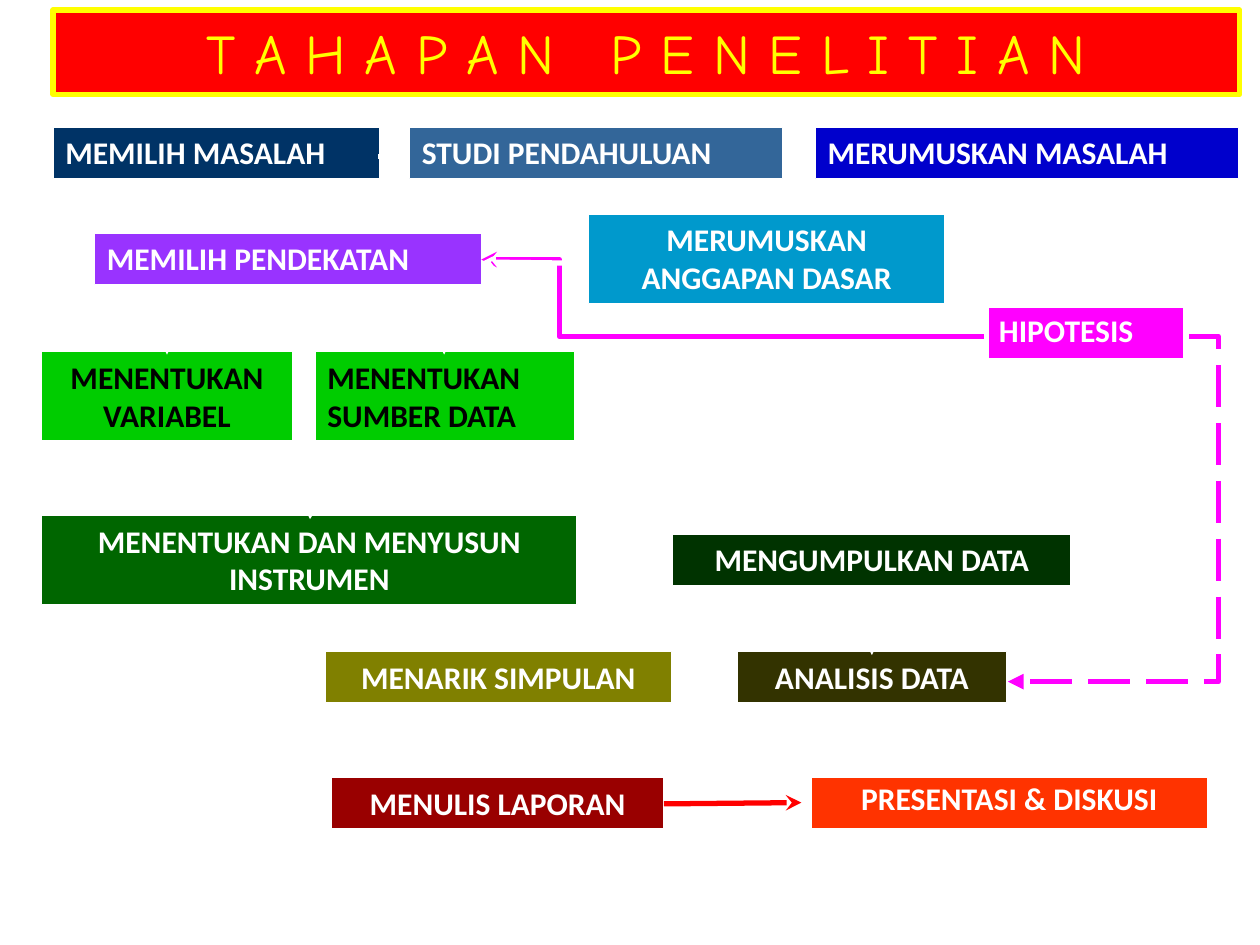
from lxml import etree
from pptx import Presentation
from pptx.dml.color import RGBColor
from pptx.enum.dml import MSO_LINE
from pptx.enum.shapes import MSO_CONNECTOR, MSO_SHAPE
from pptx.enum.text import MSO_ANCHOR, MSO_AUTO_SIZE, PP_ALIGN
from pptx.oxml.ns import qn
from pptx.util import Inches, Pt

RECTANGLE = MSO_SHAPE.RECTANGLE
STRAIGHT, ELBOW = MSO_CONNECTOR.STRAIGHT, MSO_CONNECTOR.ELBOW
LEFT, CENTER = PP_ALIGN.LEFT, PP_ALIGN.CENTER
TOP, MIDDLE = MSO_ANCHOR.TOP, MSO_ANCHOR.MIDDLE
GROW = MSO_AUTO_SIZE.SHAPE_TO_FIT_TEXT
LONG_DASH = MSO_LINE.LONG_DASH

COLORS = {
    "white": "FFFFFF", "black": "000000", "yellow": "FFFF00", "red": "FF0000",
    "navy": "003366", "steel": "336699", "blue": "0000CC", "sky": "0099CC",
    "magenta": "FF00FF", "violet": "9933FF", "lime": "00CC00",
    "green": "006600", "forest": "003300", "brown": "333300",
    "olive": "808000", "maroon": "990000", "orange": "FF3300",
}

prs = Presentation()
prs.slide_width, prs.slide_height = Inches(10), Inches(7.5)
slide = prs.slides.add_slide(prs.slide_layouts[6])


def add_box(lines, box, fill, align, ink="white", border="white", weight=0.75,
            font="Calibri", size=18, bold=True, wrap=False, anchor=TOP):
    stage = slide.shapes.add_shape(RECTANGLE, *map(Inches, box))
    stage.shadow.inherit = False
    stage.fill.solid()
    stage.fill.fore_color.rgb = RGBColor.from_string(COLORS[fill])
    stage.line.color.rgb = RGBColor.from_string(COLORS[border])
    stage.line.width = Pt(weight)
    frame = stage.text_frame
    frame.word_wrap = wrap
    frame.vertical_anchor = anchor
    if anchor == TOP:
        frame.auto_size = GROW
    for index, line in enumerate(lines):
        paragraph = frame.add_paragraph() if index else frame.paragraphs[0]
        paragraph.alignment = align
        run = paragraph.add_run()
        run.text = line
        run.font.name, run.font.size, run.font.bold = font, Pt(size), bold
        run.font.color.rgb = RGBColor.from_string(COLORS[ink])


def add_arrow(kind, start, end, color="white", head="stealth", dash=None):
    arrow = slide.shapes.add_connector(kind, *map(Inches, start + end))
    arrow.line.color.rgb = RGBColor.from_string(COLORS[color])
    arrow.line.width = Pt(3)
    if dash:
        arrow.line.dash_style = dash
    properties = arrow._element.spPr
    etree.SubElement(properties.find(qn("a:ln")), qn("a:tailEnd"), type=head)
    etree.SubElement(properties, qn("a:effectLst"))
    return properties


add_box(["T A H A P A N   P E N E L I T I A N"], (0.42, 0.08, 9.42, 0.67), "red", CENTER,
        ink="yellow", border="yellow", weight=3, font="Comic Neue", size=32,
        bold=False, wrap=True, anchor=MIDDLE)

ONE_LINE, TWO_LINES = 0.41, 0.71
stages = [
    (["MEMILIH MASALAH"], (0.42, 1.01, 2.59, ONE_LINE), "navy", LEFT, {}),
    (["STUDI PENDAHULUAN"], (3.25, 1.01, 2.96, ONE_LINE), "steel", LEFT, {}),
    (["MERUMUSKAN MASALAH"], (6.47, 1.01, 3.36, ONE_LINE), "blue", LEFT, {}),
    (["MERUMUSKAN ANGGAPAN DASAR"], (4.67, 1.7, 2.83, TWO_LINES), "sky", CENTER, {"wrap": True}),
    (["HIPOTESIS"], (7.83, 2.42, 1.58, 0.44), "magenta", LEFT, {"weight": 3}),
    (["MEMILIH PENDEKATAN"], (0.75, 1.85, 3.07, ONE_LINE), "violet", LEFT, {}),
    (["MENENTUKAN", "VARIABEL"], (0.33, 2.79, 1.99, TWO_LINES), "lime", CENTER, {"ink": "black"}),
    (["MENENTUKAN", "SUMBER DATA"], (2.5, 2.79, 2.06, TWO_LINES), "lime", LEFT, {"ink": "black"}),
    (["MENENTUKAN DAN MENYUSUN INSTRUMEN"], (0.33, 4.09, 4.25, TWO_LINES), "green", CENTER,
     {"wrap": True}),
    (["MENGUMPULKAN DATA"], (5.34, 4.24, 3.16, ONE_LINE), "forest", CENTER, {}),
    (["ANALISIS DATA"], (5.85, 5.17, 2.14, ONE_LINE), "brown", CENTER, {}),
    (["MENARIK SIMPULAN"], (2.58, 5.17, 2.75, ONE_LINE), "olive", CENTER, {}),
    (["MENULIS LAPORAN"], (2.63, 6.17, 2.64, ONE_LINE), "maroon", CENTER, {}),
    (["PRESENTASI & DISKUSI"], (6.4, 6.13, 3.22, 0.48), "orange", CENTER, {"weight": 6}),
]
for lines, box, fill, align, options in stages:
    add_box(lines, box, fill, align, **options)

bends = [
    ((7.5, 1.44, 0.64, 0.65), 90, False, None, {}),
    ((3.82, 2.06, 3.99, 0.61), 180, False, 0.845, {"color": "magenta"}),
    ((1.54, 2.07, 0.53, 0.96), 90, False, 0.5, {}),
    ((2.64, 1.93, 0.53, 1.24), 270, True, 0.5, {}),
    ((1.6, 3.25, 0.59, 1.14), 270, True, 0.5, {}),
    ((2.7, 3.29, 0.59, 1.07), 90, False, 0.5, {}),
    ((8, 2.67, 1.44, 2.74), 0, True, -0.16,
     {"color": "magenta", "head": "triangle", "dash": LONG_DASH}),
]
for (left, top, width, height), turn, mirrored, bend, options in bends:
    near, far = (left + width, left) if mirrored else (left, left + width)
    properties = add_arrow(ELBOW, (near, top), (far, top + height), **options)
    properties.find(qn("a:xfrm")).set("rot", str(turn * 60000))
    geometry = properties.find(qn("a:prstGeom"))
    if bend is None:
        geometry.set("prst", "bentConnector2")
    else:
        etree.SubElement(geometry.find(qn("a:avLst")), qn("a:gd"),
                         name="adj1", fmla=f"val {round(bend * 100000)}")

straights = [
    ((3, 1.24), (3.25, 1.24), {}),
    ((6.21, 1.24), (6.47, 1.24), {}),
    ((4.67, 2.09), (3.82, 2.08), {}),
    ((4.58, 4.47), (5.34, 4.47), {}),
    ((6.92, 4.68), (6.92, 5.2), {"head": "triangle"}),
    ((5.85, 5.38), (5.33, 5.38), {}),
    ((3.96, 5.58), (3.95, 6.17), {}),
    ((5.27, 6.38), (6.36, 6.37), {"color": "red"}),
]
for start, end, options in straights:
    add_arrow(STRAIGHT, start, end, **options)

prs.save("out.pptx")
